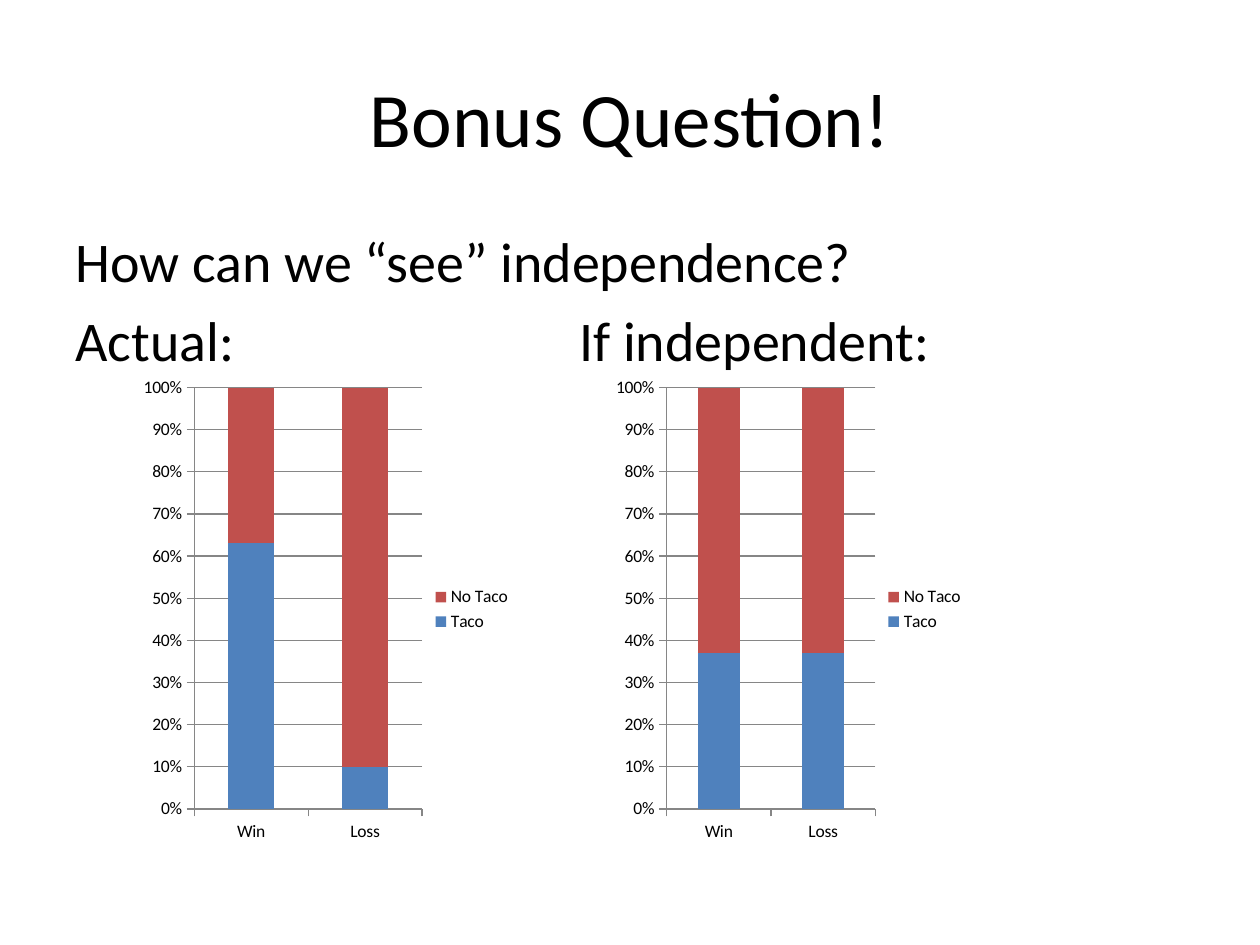
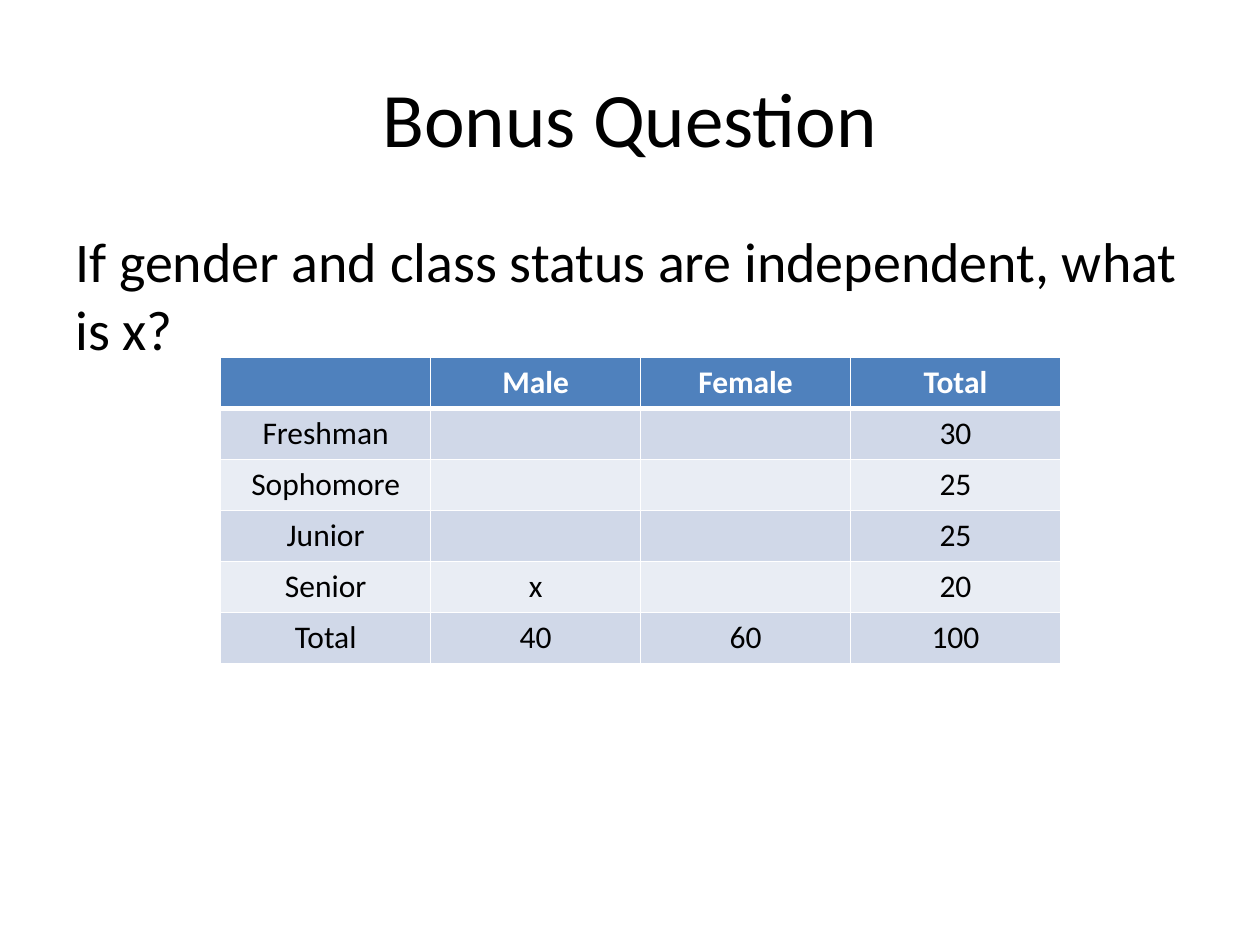
from lxml.etree import SubElement
from pptx import Presentation
from pptx.chart.data import CategoryChartData
from pptx.dml.color import RGBColor
from pptx.enum.chart import XL_CHART_TYPE, XL_LEGEND_POSITION, XL_TICK_MARK
from pptx.enum.text import MSO_ANCHOR, PP_ALIGN
from pptx.oxml.ns import qn
from pptx.util import Cm, Pt

BLACK, WHITE, GREY = "000000", "FFFFFF", "868686"
BLUE, RED = "4F81BD", "C0504D"
BANDS = ["D0D8E8", "E9EDF4"]


def style(font, size, color=BLACK, bold=False):
    formats = {"name": "Calibri", "size": Pt(size), "bold": bold}
    for key, value in formats.items():
        setattr(font, key, value)
    font.color.rgb = RGBColor.from_string(color)


def add_question(title, lines):
    """Add a slide with its title and body lines, and return it."""
    s = prs.slides.add_slide(prs.slide_layouts[5])
    sp = s.shapes.title
    place = {"left": Cm(1.27), "top": Cm(0.76), "width": Cm(22.86), "height": Cm(3.18)}
    for key, value in place.items():
        setattr(sp, key, value)
    tf = sp.text_frame
    tf.text = title
    tf.vertical_anchor = MSO_ANCHOR.MIDDLE
    tf.paragraphs[0].alignment = PP_ALIGN.CENTER
    style(tf.paragraphs[0].runs[0].font, 44)

    tf = s.shapes.add_textbox(Cm(1.27), Cm(4.45), Cm(22.86), Cm(12.57)).text_frame
    tf.word_wrap = True
    for i, line in enumerate(lines):
        p = tf.add_paragraph() if i else tf.paragraphs[0]
        p.space_before = Pt(6.4)
        r = p.add_run()
        r.text = line
        style(r.font, 32)
        if "\t" in line:
            tabs = SubElement(p._p.get_or_add_pPr(), qn("a:tabLst"))
            SubElement(tabs, qn("a:tab"), pos=str(Cm(10.16)), algn="l")
    return s


prs = Presentation()
prs.slide_width, prs.slide_height = Cm(25.4), Cm(19.05)

# Slide 1: actual shares beside the shares expected under independence
s = add_question("Bonus Question!",
                 ["How can we “see” independence?", "Actual:\tIf independent:"])
charts = [
    (2.74, 7.82, [63, 10], [37, 90]),
    (12.27, 7.42, [37, 37], [63, 63]),
]
for left, width, taco, no_taco in charts:
    data = CategoryChartData()
    data.categories = ["Win", "Loss"]
    data.add_series("Taco", taco)
    data.add_series("No Taco", no_taco)
    chart = s.shapes.add_chart(XL_CHART_TYPE.COLUMN_STACKED_100, Cm(left), Cm(7.42),
                               Cm(width), Cm(9.73), data).chart
    style(chart.font, 10)
    chart.has_title = False
    chart.has_legend = True
    chart.legend.position = XL_LEGEND_POSITION.RIGHT
    chart.legend.include_in_layout = False

    plot = chart.plots[0]
    for key, value in {"gap_width": 150, "overlap": 100, "vary_by_categories": False}.items():
        setattr(plot, key, value)
    for series, color in zip(plot.series, [BLUE, RED]):
        series.format.fill.solid()
        series.format.fill.fore_color.rgb = RGBColor.from_string(color)

    val_axis = chart.value_axis
    val_axis.has_major_gridlines = True
    val_axis.tick_labels.number_format = "0%"
    val_axis.tick_labels.number_format_is_linked = False
    for axis in (chart.category_axis, val_axis):
        axis.major_tick_mark = XL_TICK_MARK.OUTSIDE
    for part in (chart.category_axis, val_axis, val_axis.major_gridlines):
        part.format.line.width = Pt(0.75)
        part.format.line.color.rgb = RGBColor.from_string(GREY)

# Slide 2: class status by gender
s = add_question("Bonus Question", ["If gender and class status are independent, what is x?"])
rows = [
    ["", "Male", "Female", "Total"],
    ["Freshman", "", "", "30"],
    ["Sophomore", "", "", "25"],
    ["Junior", "", "", "25"],
    ["Senior", "x", "", "20"],
    ["Total", "40", "60", "100"],
]
table = s.shapes.add_table(len(rows), len(rows[0]), Cm(4.45), Cm(7.2),
                           Cm(16.93), Cm(6.18)).table
for i, row in enumerate(rows):
    header = i == 0
    fill = BLUE if header else BANDS[(i - 1) % 2]
    borders = {"lnL": 1, "lnR": 1, "lnT": 3 if i == 1 else 1, "lnB": 3 if header else 1}
    for j, text in enumerate(row):
        cell = table.cell(i, j)
        for tag, width in borders.items():
            ln = SubElement(cell._tc.get_or_add_tcPr(), qn("a:" + tag), w=str(Pt(width)))
            SubElement(SubElement(ln, qn("a:solidFill")), qn("a:srgbClr"), val=WHITE)
        cell.fill.solid()
        cell.fill.fore_color.rgb = RGBColor.from_string(fill)
        p = cell.text_frame.paragraphs[0]
        p.alignment = PP_ALIGN.CENTER
        style(p.font, 18, WHITE if header else BLACK, header)
        if text:
            r = p.add_run()
            r.text = text
            style(r.font, 18, WHITE if header else BLACK, header)

prs.save("out.pptx")
